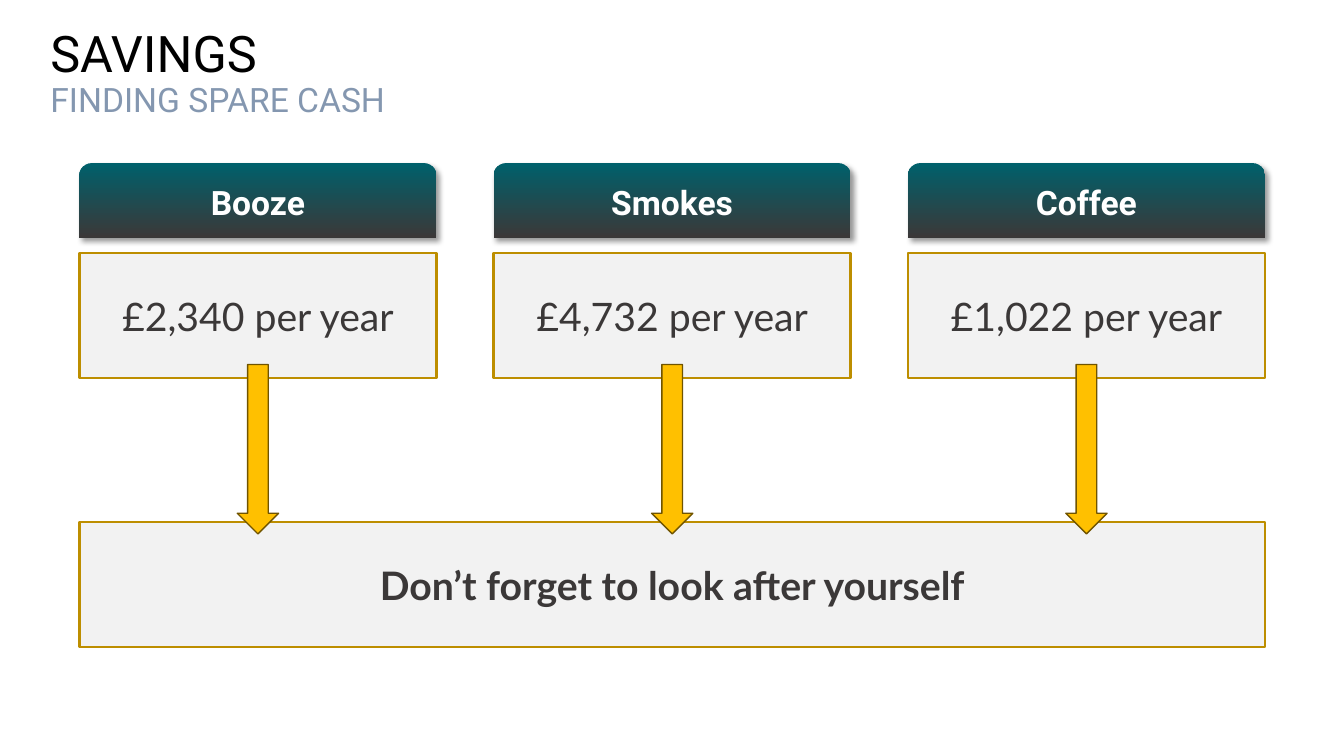
from dataclasses import dataclass
from lxml.etree import SubElement as Sub
from pptx import Presentation
from pptx.dml.color import RGBColor
from pptx.enum.shapes import MSO_SHAPE as Kind
from pptx.enum.text import MSO_ANCHOR as Anchor, PP_ALIGN as Align
from pptx.oxml.ns import qn
from pptx.util import Cm, Pt

DARK = "3B3838"
LEFT, STEP, WIDE = 2.0, 10.44, 9.0
BOX_H = 3.15


@dataclass
class Cost:
    name: str
    sum: str


COSTS = [
    Cost("Booze", "£2,340 per year"),
    Cost("Smokes", "£4,732 per year"),
    Cost("Coffee", "£1,022 per year"),
]


def color(code: str) -> RGBColor:
    return RGBColor.from_string(code)


def write(frame, text: str, *, size: float, font: str, ink: str,
          bold: bool = False, align=Align.CENTER, space: float = 1.0,
          more: bool = False) -> None:
    frame.word_wrap = True
    frame.vertical_anchor = Anchor.MIDDLE
    para = frame.add_paragraph() if more else frame.paragraphs[0]
    para.alignment = align
    para.line_spacing = space
    run = para.add_run()
    run.text = text
    run.font.size = Pt(size)
    run.font.name = font
    run.font.bold = bold
    run.font.color.rgb = color(ink)


def draw(kind, x: float, y: float, w: float, h: float,
         fill: str = "", line: str = "", width: float = 1):
    shape = slide.shapes.add_shape(kind, Cm(x), Cm(y), Cm(w), Cm(h))
    shape.shadow.inherit = False
    if fill:
        shape.fill.solid()
        shape.fill.fore_color.rgb = color(fill)
    if line:
        shape.line.color.rgb = color(line)
        shape.line.width = Pt(width)
    else:
        shape.line.fill.background()
    return shape


def shade(shape) -> None:
    shape.fill.gradient()
    shape.fill.gradient_angle = 270
    for stop, code, place in zip(shape.fill.gradient_stops, ("00606B", DARK), (0, 1)):
        stop.color.rgb = color(code)
        stop.position = place
    effects = shape._element.spPr.find(qn("a:effectLst"))
    outer = Sub(effects, qn("a:outerShdw"), blurRad=str(Pt(4)), dist=str(Pt(3)),
                dir="2700000", algn="tl", rotWithShape="0")
    tint = Sub(outer, qn("a:srgbClr"), val="000000")
    Sub(tint, qn("a:alpha"), val="40000")


def panel(text: str, x: float, y: float, w: float, bold: bool = False) -> None:
    box = draw(Kind.RECTANGLE, x, y, w, BOX_H, "F2F2F2", "BD8E00", 1.75)
    write(box.text_frame, text, size=28, font="Lato", ink=DARK, bold=bold)


def column(cost: Cost, x: float) -> None:
    head = draw(Kind.ROUND_2_SAME_RECTANGLE, x, 4.11, WIDE, 1.88)
    shade(head)
    write(head.text_frame, cost.name, size=24, font="Roboto", ink="FFFFFF", bold=True)
    panel(cost.sum, x, 6.38, WIDE)


def arrow(x: float) -> None:
    long, thick = 4.27, 1.04
    shape = draw(Kind.RIGHT_ARROW, x + (WIDE - long) / 2, 10.8, long, thick,
                 "FFC000", "705400")
    shape.rotation = 90


deck = Presentation()
deck.slide_width, deck.slide_height = Cm(33.87), Cm(19.05)
slide = deck.slides.add_slide(deck.slide_layouts[6])

title = slide.shapes.add_textbox(Cm(1.02), Cm(0.86), Cm(25.88), Cm(2.03)).text_frame
write(title, "SAVINGS", size=36, font="Roboto", ink="000000",
      align=Align.LEFT, space=0.9)
write(title, "FINDING SPARE CASH", size=24, font="Roboto", ink="8497B0",
      align=Align.LEFT, space=0.9, more=True)

spots = [LEFT + i * STEP for i in range(len(COSTS))]
for cost, x in zip(COSTS, spots):
    column(cost, x)
panel("Don’t forget to look after yourself", LEFT, 13.16,
      spots[-1] + WIDE - LEFT, bold=True)
for x in spots:
    arrow(x)

deck.save("out.pptx")
